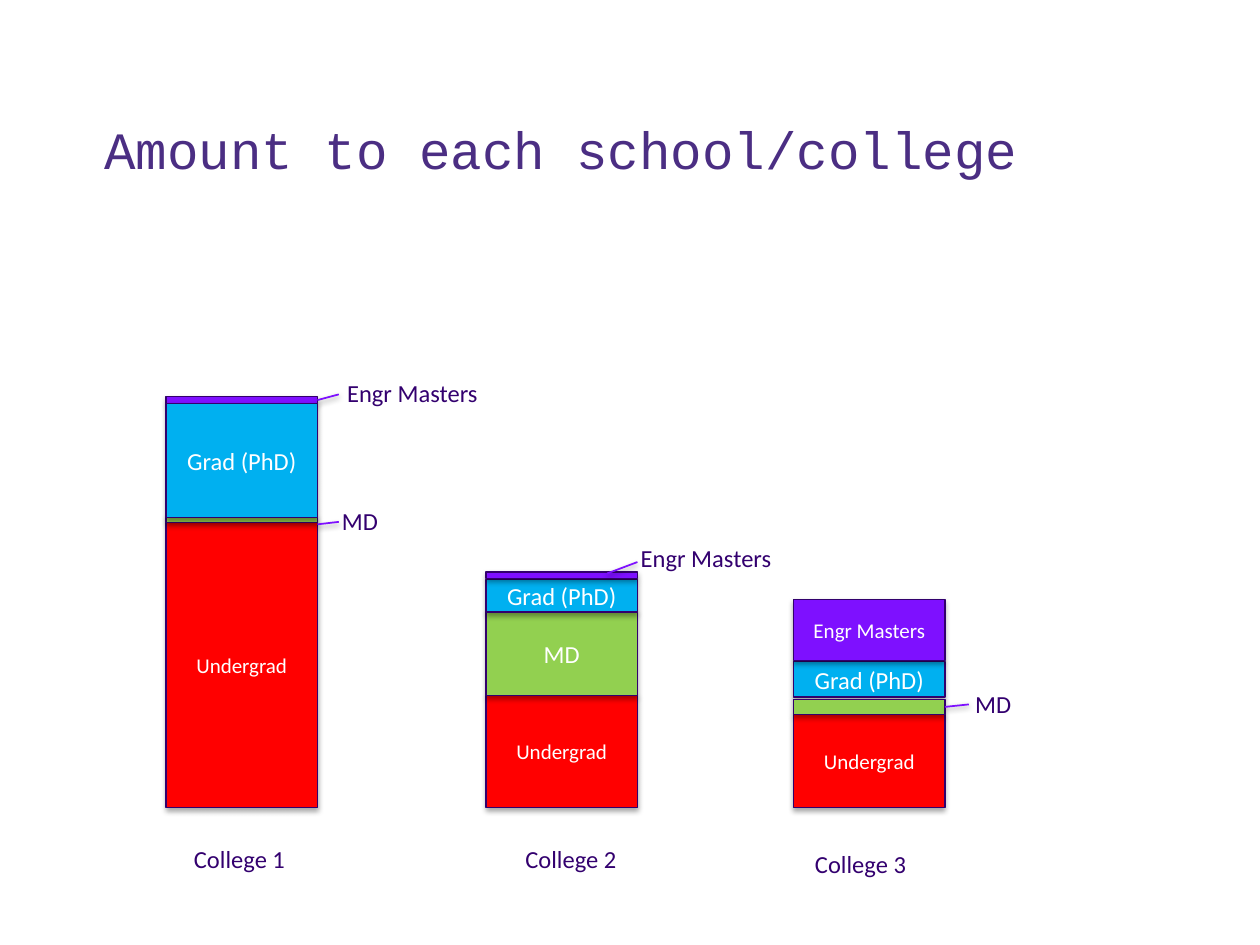
from dataclasses import dataclass
from typing import Optional

from lxml.etree import SubElement
from pptx import Presentation
from pptx.dml.color import RGBColor
from pptx.enum.shapes import MSO_CONNECTOR, MSO_SHAPE
from pptx.enum.text import MSO_ANCHOR, PP_ALIGN
from pptx.oxml.ns import qn
from pptx.util import Cm, Pt

WIDTH = 3.05
THIN = 0.5  # bars below this height carry no text
EDGE, INK, VIOLET = "32006D", "33006F", "7E10FF"


@dataclass
class Kind:
    name: str
    fill: str
    size: int


@dataclass
class Bar:
    kind: Kind
    top: float
    height: float


@dataclass
class Stack:
    left: float
    bars: list[Bar]


@dataclass
class Label:
    text: str
    left: float
    top: float
    width: float
    align: PP_ALIGN = PP_ALIGN.LEFT


@dataclass
class Lead:
    start: tuple[float, float]
    end: tuple[float, float]
    join: Optional[tuple[int, str]] = None  # stack number and bar name


UNDER = Kind("Undergrad", "FF0000", 12)
MED = Kind("MD", "92D050", 14)
ENGR = Kind("Engr Masters", VIOLET, 12)
GRAD = Kind("Grad (PhD)", "00B0F0", 14)

STACKS = [
    Stack(3.35, [Bar(UNDER, 10.54, 5.74), Bar(MED, 10.41, 0.13),
                 Bar(ENGR, 8, 0.13), Bar(GRAD, 8.13, 2.31)]),
    Stack(9.8, [Bar(UNDER, 14.02, 2.26), Bar(MED, 12.32, 1.7),
                Bar(GRAD, 11.68, 0.66), Bar(ENGR, 11.53, 0.13)]),
    Stack(16, [Bar(GRAD, 13.34, 0.71), Bar(ENGR, 12.09, 1.22),
               Bar(UNDER, 14.4, 1.88), Bar(MED, 14.1, 0.3)]),
]
LABELS = [
    Label("College 1", 3.66, 16.89, 3.73),
    Label("College 2", 10.34, 16.89, 3.73),
    Label("College 3", 16.18, 16.99, 3.73),
    Label("MD", 6.17, 10.08, 1.7, PP_ALIGN.RIGHT),
    Label("Engr Masters", 6.4, 7.49, 3.48, PP_ALIGN.RIGHT),
    Label("Engr Masters", 12.32, 10.82, 3.48, PP_ALIGN.RIGHT),
    Label("MD", 19.41, 13.77, 1.7),
]
LEADS = [
    Lead((6.4, 8.03), (6.83, 7.95), (0, "Engr Masters")),
    Lead((6.4, 10.57), (6.83, 10.52)),
    Lead((12.24, 11.56), (12.85, 11.33)),
    Lead((19.05, 14.25), (19.53, 14.2), (2, "MD")),
]


def paint(code: str) -> RGBColor:
    return RGBColor.from_string(code)


def shade(shape, gap: float, alpha: int) -> None:
    """Give a shape a soft black shadow straight below it."""
    effects = SubElement(shape._element.spPr, qn("a:effectLst"))
    outer = SubElement(effects, qn("a:outerShdw"), blurRad=str(Pt(3.1)),
                       dist=str(Pt(gap)), dir="5400000", rotWithShape="0")
    black = SubElement(outer, qn("a:srgbClr"), val="000000")
    SubElement(black, qn("a:alpha"), val=str(alpha * 1000))


def write(para, text: str, size: int, color: str, face: str = "Calibri") -> None:
    run = para.add_run()
    run.text = text
    run.font.size = Pt(size)
    run.font.name = face
    run.font.color.rgb = paint(color)


def draw_bar(slide, left: float, bar: Bar):
    shape = slide.shapes.add_shape(MSO_SHAPE.RECTANGLE, Cm(left), Cm(bar.top),
                                   Cm(WIDTH), Cm(bar.height))
    shape.fill.solid()
    shape.fill.fore_color.rgb = paint(bar.kind.fill)
    shape.line.color.rgb = paint(EDGE)
    shape.line.width = Pt(0.75)
    shade(shape, 1.8, 35)
    if bar.height > THIN:
        frame = shape.text_frame
        frame.vertical_anchor = MSO_ANCHOR.MIDDLE
        para = frame.paragraphs[0]
        para.alignment = PP_ALIGN.CENTER
        write(para, bar.kind.name, bar.kind.size, "FFFFFF")
    return shape


def draw_label(slide, label: Label) -> None:
    box = slide.shapes.add_textbox(Cm(label.left), Cm(label.top),
                                   Cm(label.width), Cm(0.86))
    box.text_frame.word_wrap = True
    para = box.text_frame.paragraphs[0]
    para.alignment = label.align
    write(para, label.text, 14, INK)


def draw_lead(slide, lead: Lead, bars: dict) -> None:
    line = slide.shapes.add_connector(
        MSO_CONNECTOR.STRAIGHT, *map(Cm, lead.start + lead.end))
    if lead.join:
        line.begin_connect(bars[lead.join], 3)
    line.line.color.rgb = paint(VIOLET)
    line.line.width = Pt(1)
    shade(line, 1.6, 38)


def draw_title(slide, text: str) -> None:
    box = slide.shapes.add_textbox(Cm(1.85), Cm(0.43), Cm(22.73), Cm(3.35))
    frame = box.text_frame
    frame.word_wrap = True
    frame.vertical_anchor = MSO_ANCHOR.BOTTOM
    para = frame.paragraphs[0]
    para.line_spacing = 0.9
    write(para, text, 30, "4B2E83", "Courier New")


def main() -> None:
    deck = Presentation()
    deck.slide_width, deck.slide_height = Cm(25.4), Cm(19.05)
    slide = deck.slides.add_slide(deck.slide_layouts[6])
    draw_title(slide, "Amount to each school/college")
    bars = {(num, bar.kind.name): draw_bar(slide, stack.left, bar)
            for num, stack in enumerate(STACKS) for bar in stack.bars}
    for label in LABELS:
        draw_label(slide, label)
    for lead in LEADS:
        draw_lead(slide, lead, bars)
    deck.save("out.pptx")


if __name__ == "__main__":
    main()
